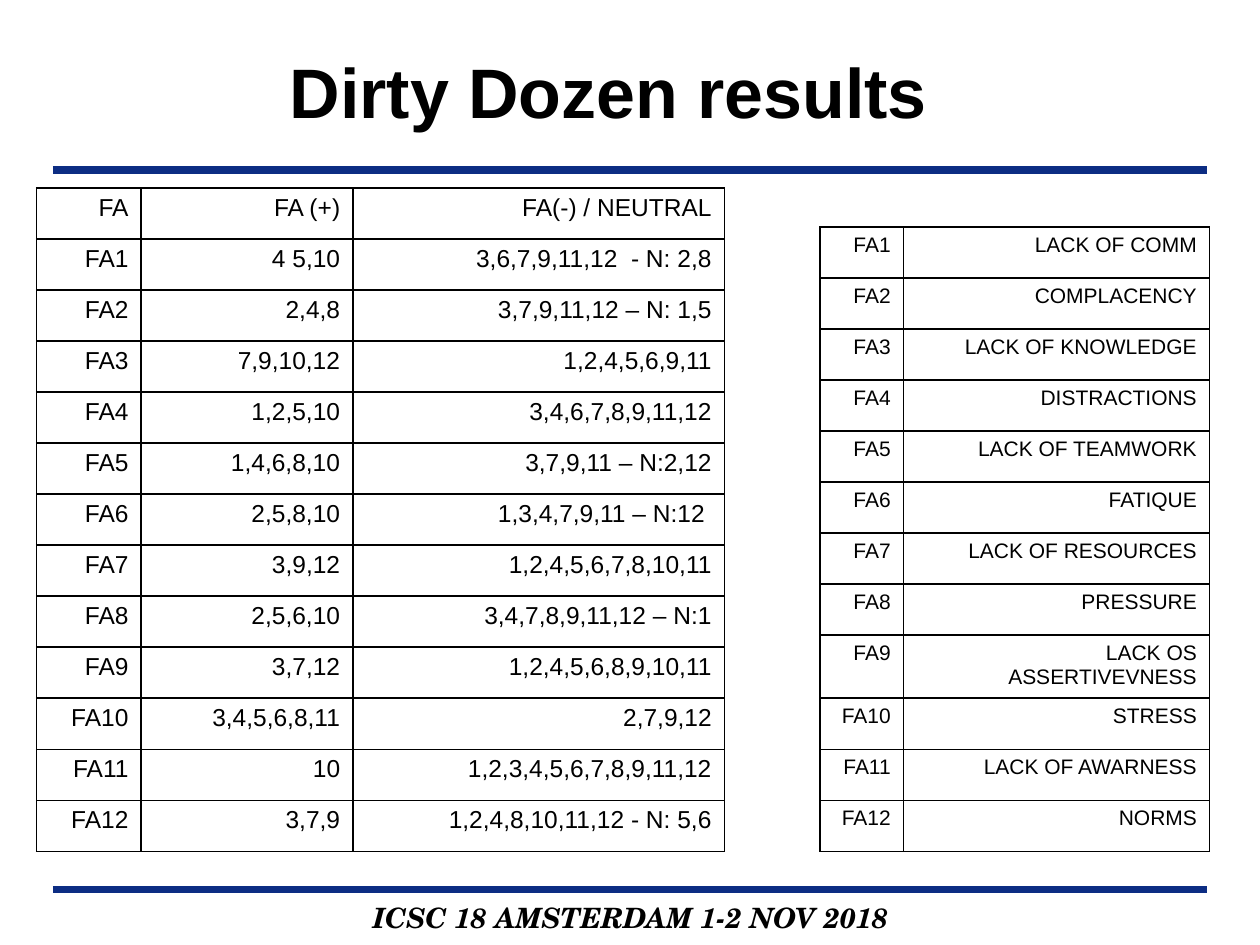
from lxml import etree
from pptx import Presentation
from pptx.dml.color import RGBColor
from pptx.enum.shapes import MSO_CONNECTOR
from pptx.enum.text import MSO_ANCHOR, PP_ALIGN
from pptx.oxml import parse_xml
from pptx.oxml.ns import qn
from pptx.util import Inches, Pt

STRAIGHT = MSO_CONNECTOR.STRAIGHT
LEFT, CENTER, RIGHT = PP_ALIGN.LEFT, PP_ALIGN.CENTER, PP_ALIGN.RIGHT
TOP, MIDDLE = MSO_ANCHOR.TOP, MSO_ANCHOR.MIDDLE
BLACK, BLUE = "000000", "0C2D83"
SANS, SERIF = "Arial", "TeX Gyre Schola"
ROW = 5.27 / 13
NS = "http://schemas.openxmlformats.org/drawingml/2006/main"

SCORES = [
    ("FA", "FA (+)", "FA(-) / NEUTRAL"),
    ("FA1", "4 5,10", "3,6,7,9,11,12  - N: 2,8"),
    ("FA2", "2,4,8", "3,7,9,11,12 – N: 1,5"),
    ("FA3", "7,9,10,12", "1,2,4,5,6,9,11"),
    ("FA4", "1,2,5,10", "3,4,6,7,8,9,11,12"),
    ("FA5", "1,4,6,8,10", "3,7,9,11 – N:2,12"),
    ("FA6", "2,5,8,10", "1,3,4,7,9,11 – N:12 "),
    ("FA7", "3,9,12", "1,2,4,5,6,7,8,10,11"),
    ("FA8", "2,5,6,10", "3,4,7,8,9,11,12 – N:1"),
    ("FA9", "3,7,12", "1,2,4,5,6,8,9,10,11"),
    ("FA10", "3,4,5,6,8,11", "2,7,9,12"),
    ("FA11", "10", "1,2,3,4,5,6,7,8,9,11,12"),
    ("FA12", "3,7,9", "1,2,4,8,10,11,12 - N: 5,6"),
]
FACTORS = [
    "LACK OF COMM", "COMPLACENCY", "LACK OF KNOWLEDGE", "DISTRACTIONS",
    "LACK OF TEAMWORK", "FATIQUE", "LACK OF RESOURCES", "PRESSURE",
    "LACK OS ASSERTIVEVNESS", "STRESS", "LACK OF AWARNESS", "NORMS",
]


def color(code):
    """Turn a hex string into a colour."""
    return RGBColor.from_string(code)


def write(frame, text, size, face, align, bold=False, italic=False):
    """Fill a text frame with one styled paragraph."""
    frame.text = text
    para = frame.paragraphs[0]
    para.alignment = align
    for run in para.runs:
        font = run.font
        font.size, font.name = Pt(size), face
        font.bold, font.italic = bold, italic
        font.color.rgb = color(BLACK)


def fit(shape, box, anchor):
    """Place a text shape in its box with narrow insets."""
    shape.left, shape.top, shape.width, shape.height = map(Inches, box)
    frame = shape.text_frame
    frame.word_wrap = True
    frame.vertical_anchor = anchor
    frame.margin_left = frame.margin_right = Inches(0.05)
    frame.margin_top = frame.margin_bottom = Inches(0.05)
    return frame


def add_rule(slide, left, top, width):
    """Draw a thick horizontal rule."""
    rule = slide.shapes.add_connector(
        STRAIGHT, Inches(left), Inches(top), Inches(left + width), Inches(top))
    rule.line.color.rgb = color(BLUE)
    rule.line.width = Pt(4.5)
    etree.SubElement(rule._element.spPr, qn("a:effectLst"))


def add_title(slide, box):
    """Place and style the title."""
    frame = fit(slide.shapes.title, box, MIDDLE)
    write(frame, "Dirty Dozen results", 40, SANS, LEFT, bold=True)


def add_footer(slide, box):
    """Place the event line below the lower rule."""
    frame = fit(slide.shapes.add_textbox(*map(Inches, box)), box, TOP)
    write(frame, "ICSC 18 AMSTERDAM 1-2 NOV 2018", 16, SERIF, CENTER,
          bold=True, italic=True)


def add_edges(cell):
    """Give a cell a thin border on every side."""
    props = cell._tc.get_or_add_tcPr()
    for spot, side in enumerate(("lnL", "lnR", "lnT", "lnB")):
        props.insert(spot, parse_xml(
            f'<a:{side} xmlns:a="{NS}" w="{Pt(1)}"><a:solidFill>'
            f'<a:srgbClr val="{BLACK}"/></a:solidFill></a:{side}>'))


def add_grid(slide, left, top, widths, rows, size):
    """Build a bordered table of right-aligned cells."""
    table = slide.shapes.add_table(
        len(rows), len(widths), Inches(left), Inches(top),
        Inches(sum(widths)), Inches(ROW * len(rows))).table
    table.first_row = table.horz_banding = False
    for column, width in zip(table.columns, widths):
        column.width = Inches(width)
    for line, row in zip(table.rows, rows):
        line.height = Inches(ROW)
        for cell, text in zip(line.cells, row):
            write(cell.text_frame, text, size, SANS, RIGHT)
            cell.fill.background()
            add_edges(cell)


def main():
    """Build and save the slide."""
    deck = Presentation()
    deck.slide_width, deck.slide_height = Inches(10), Inches(7.5)
    slide = deck.slides.add_slide(deck.slide_layouts[5])
    for top in (1.35, 7.06):
        add_rule(slide, 0.42, top, 9.16)
    add_footer(slide, (0.42, 7.1, 9.17, 0.37))
    add_title(slide, (2.25, 0.33, 5.51, 0.77))
    names = [(f"FA{n}", name) for n, name in enumerate(FACTORS, 1)]
    add_grid(slide, 6.51, 1.8, (0.66, 2.43), names, 12)
    add_grid(slide, 0.29, 1.49, (0.83, 1.68, 2.95), SCORES, 14)
    deck.save("out.pptx")


if __name__ == "__main__":
    main()
